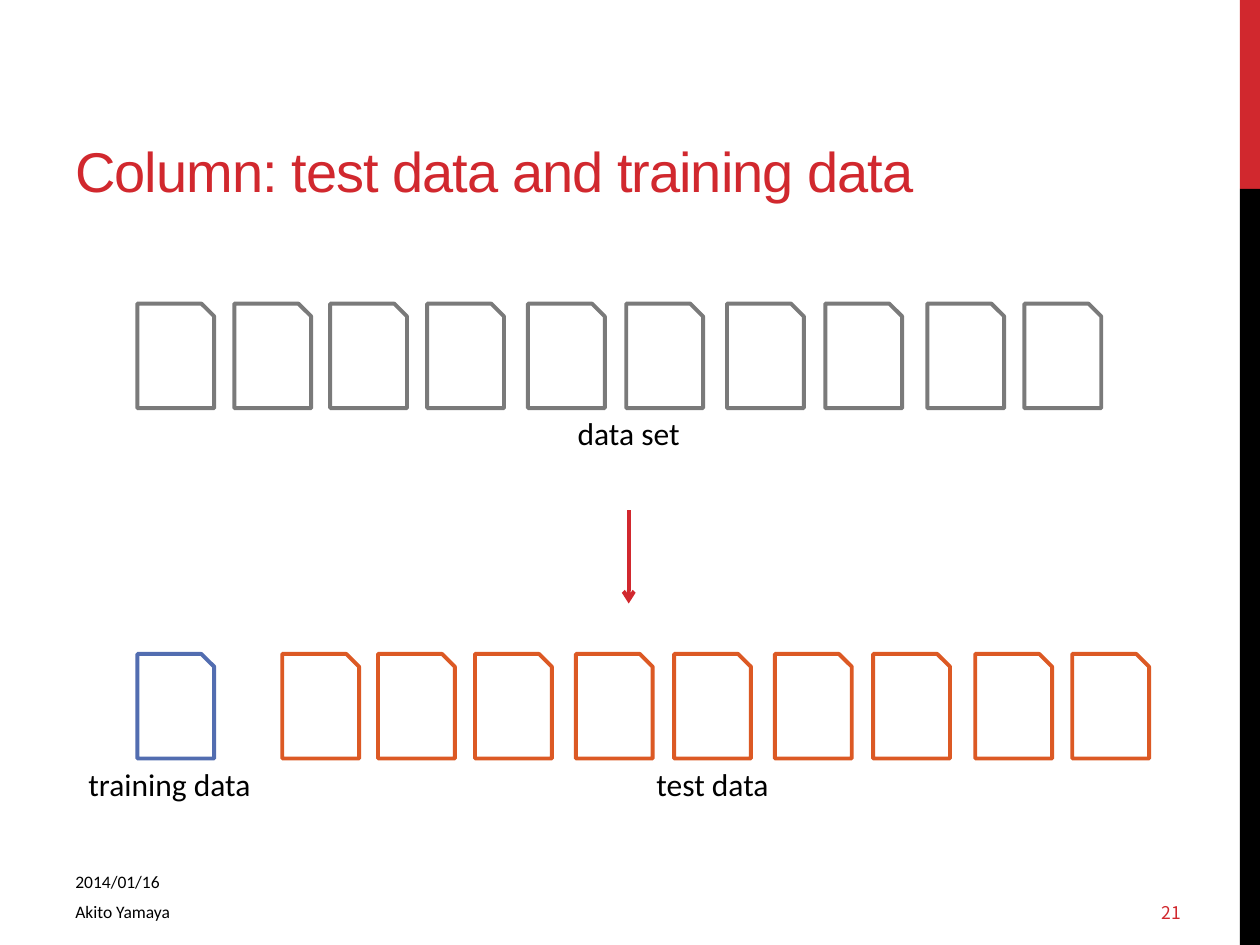
from pptx import Presentation
from pptx.dml.color import RGBColor
from pptx.enum.shapes import MSO_CONNECTOR, MSO_SHAPE
from pptx.enum.text import MSO_ANCHOR as ANCHOR, PP_ALIGN as ALIGN
from pptx.oxml.ns import qn
from pptx.util import Inches, Pt
from lxml.etree import SubElement

RED = RGBColor(0xD1, 0x28, 0x2E)
BLACK = RGBColor(0x00, 0x00, 0x00)
WHITE = RGBColor(0xFF, 0xFF, 0xFF)
GRAY = RGBColor(0x7A, 0x7A, 0x7A)
BLUE = RGBColor(0x52, 0x6D, 0xB0)
ORANGE = RGBColor(0xDC, 0x59, 0x24)

DATA_SET_LEFTS = [1.09, 1.86, 2.62, 3.39, 4.19, 4.97, 5.77, 6.55, 7.36, 8.13]
TEST_SHIFT = 0.38
DATA_SET_TOP, SPLIT_TOP = 2.41, 5.19
DOC_WIDTH, DOC_HEIGHT = 0.61, 0.83


class SlideBuilder:
    """Draws styled elements on the current slide."""

    font = {"name": "Calibri", "size": Pt(10)}
    line_width = Pt(2.25)

    def __init__(self, slide):
        self.s = slide

    def bar(self, top, height, color):
        sp = self.s.shapes.add_shape(
            MSO_SHAPE.RECTANGLE, Inches(9.84), Inches(top), Inches(0.16), Inches(height))
        sp.shadow.inherit = False
        sp.fill.solid()
        sp.fill.fore_color.rgb = color
        sp.line.fill.background()

    def document(self, left, top, color):
        sp = self.s.shapes.add_shape(
            MSO_SHAPE.SNIP_1_RECTANGLE, Inches(left), Inches(top),
            Inches(DOC_WIDTH), Inches(DOC_HEIGHT))
        sp.shadow.inherit = False
        sp.fill.solid()
        sp.fill.fore_color.rgb = WHITE
        sp.line.color.rgb = color
        sp.line.width = self.line_width

    def text(self, text, left, top, width, height, color=BLACK, align=ALIGN.LEFT,
             spacing=None, frame=None, **font):
        sp = self.s.shapes.add_textbox(
            Inches(left), Inches(top), Inches(width), Inches(height))
        tf = sp.text_frame
        for name, value in {"word_wrap": True, **(frame or {})}.items():
            setattr(tf, name, value)
        p = tf.paragraphs[0]
        p.alignment = align
        r = p.add_run()
        r.text = text
        for name, value in {**self.font, **font}.items():
            setattr(r.font, name, value)
        r.font.color.rgb = color
        if spacing is not None:
            r.font._element.set("spc", str(spacing))

    def label(self, text, left, top, width):
        self.text(text, left, top, width, 0.4, align=ALIGN.CENTER, size=Pt(18))

    def arrow(self, x, top, bottom, color):
        cn = self.s.shapes.add_connector(
            MSO_CONNECTOR.STRAIGHT, Inches(x), Inches(top), Inches(x), Inches(bottom))
        cn.line.color.rgb = color
        cn.line.width = self.line_width
        SubElement(cn.line._get_or_add_ln(), qn("a:tailEnd"), type="arrow")
        SubElement(cn._element.spPr, qn("a:effectLst"))


def main():
    prs = Presentation()
    prs.slide_width, prs.slide_height = Inches(10), Inches(7.5)
    b = SlideBuilder(prs.slides.add_slide(prs.slide_layouts[6]))

    b.bar(0, 1.5, RED)
    b.bar(1.5, 6, BLACK)
    b.text("Column: test data and training data", 0.5, 0.17, 8.82, 1.5, RED, spacing=-60,
           frame={"vertical_anchor": ANCHOR.BOTTOM}, name="Arial", size=Pt(32))
    b.text("2014/01/16", 0.5, 6.75, 3.75, 0.33,
           frame={"vertical_anchor": ANCHOR.BOTTOM, "margin_bottom": 0})
    b.text("Akito Yamaya", 0.5, 7.1, 3.75, 0.31)
    b.text("21", 9.12, 7.04, 1.44, 0.4, RED,
           frame={"vertical_anchor": ANCHOR.MIDDLE}, name="Noto Sans CJK JP")

    for left in DATA_SET_LEFTS:
        b.document(left, DATA_SET_TOP, GRAY)
    b.label("data set", 4.3, DATA_SET_TOP + DOC_HEIGHT, 1.38)

    b.arrow(4.99, 4.05, 4.79, RED)

    b.document(DATA_SET_LEFTS[0], SPLIT_TOP, BLUE)
    b.label("training data", 0.22, SPLIT_TOP + DOC_HEIGHT, 2.25)
    for left in DATA_SET_LEFTS[1:]:
        b.document(left + TEST_SHIFT, SPLIT_TOP, ORANGE)
    b.label("test data", 4.71, SPLIT_TOP + DOC_HEIGHT, 1.89)

    prs.save("out.pptx")


if __name__ == "__main__":
    main()
